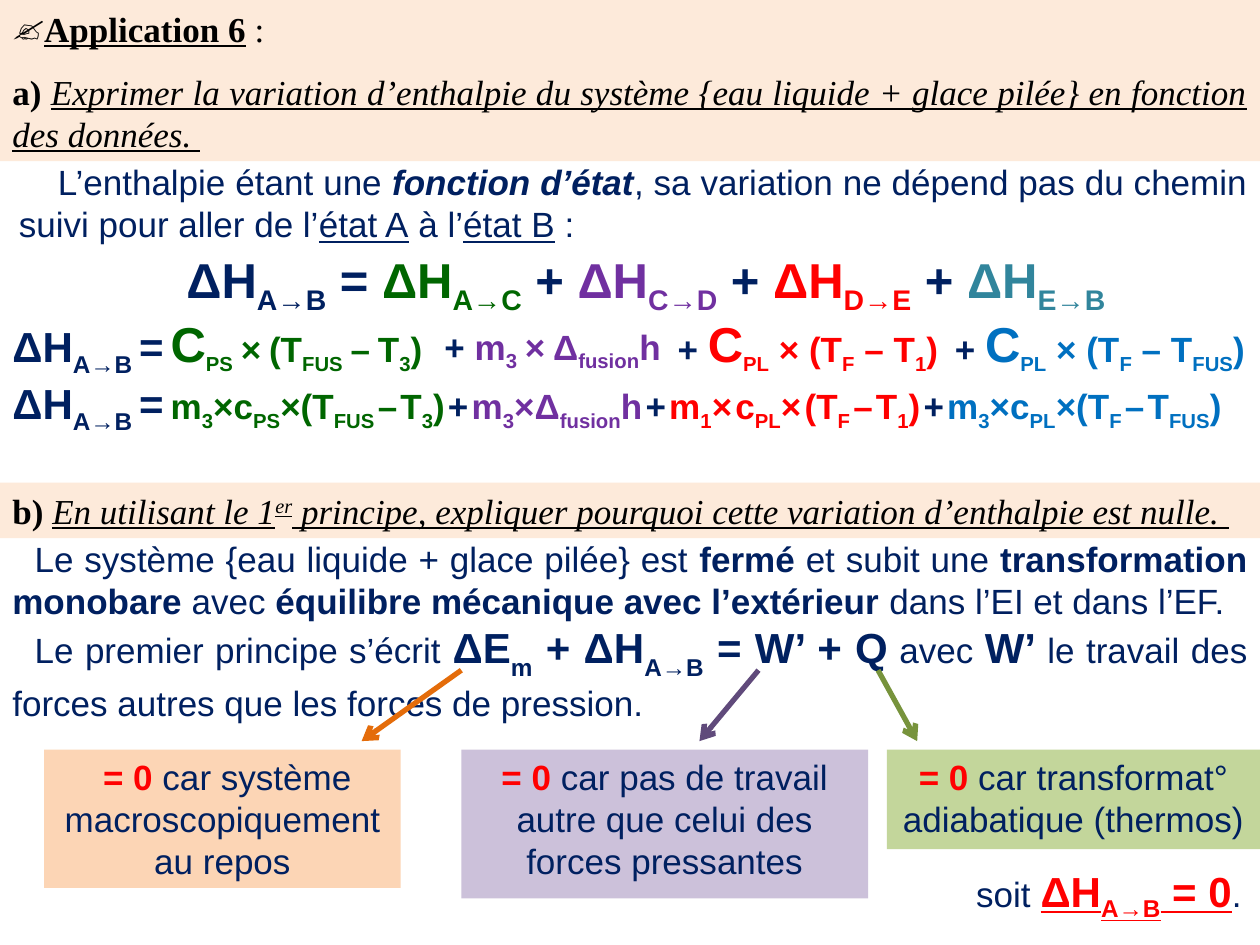
from pptx import Presentation
from pptx.dml.color import RGBColor
from pptx.enum.shapes import MSO_CONNECTOR as Link, MSO_SHAPE as Shape
from pptx.enum.text import MSO_ANCHOR as Anchor, MSO_AUTO_SIZE as Fit, PP_ALIGN as Align
from pptx.oxml.ns import qn
from pptx.util import Cm, Pt
from lxml.etree import SubElement

BLACK = RGBColor(0x00, 0x00, 0x00)
NAVY = RGBColor(0x00, 0x20, 0x60)
GREEN = RGBColor(0x00, 0x66, 0x00)
PURPLE = RGBColor(0x70, 0x30, 0xA0)
RED = RGBColor(0xFF, 0x00, 0x00)
TEAL = RGBColor(0x31, 0x85, 0x9C)
BLUE = RGBColor(0x00, 0x70, 0xC0)
CREAM = RGBColor(0xFD, 0xEA, 0xDA)
LILAC = RGBColor(0xCC, 0xC1, 0xDA)
LIME = RGBColor(0xC3, 0xD6, 0x9B)
PEACH = RGBColor(0xFC, 0xD5, 0xB5)
ORANGE = RGBColor(0xE4, 0x6C, 0x0A)
PLUM = RGBColor(0x60, 0x4A, 0x7B)
OLIVE = RGBColor(0x77, 0x93, 0x3C)
SERIF = "Times New Roman"

deck = Presentation()
deck.slide_width, deck.slide_height = Cm(25.4), Cm(19.05)
slide = deck.slides.add_slide(deck.slide_layouts[6])


def add_box(x, y, w, h, fill=None, anchor=Anchor.TOP, fit=Fit.NONE, wrap=True):
    area = Cm(x), Cm(y), Cm(w), Cm(h)
    if fill is None:
        box = slide.shapes.add_textbox(*area)
    else:
        box = slide.shapes.add_shape(Shape.RECTANGLE, *area)
        box.shadow.inherit = False
        box.fill.solid()
        box.fill.fore_color.rgb = fill
        box.line.fill.background()
    frame = box.text_frame
    looks = {"word_wrap": wrap, "auto_size": fit, "vertical_anchor": anchor}
    for key, val in looks.items():
        setattr(frame, key, val)
    return frame


def write(par, runs, face="Arial", align=Align.LEFT, after=0, shift=-25, gap=("Arial", 16)):
    par.alignment = align
    par.space_after = Pt(after)
    for text, size, color, style in runs:
        for i, part in enumerate(text.split("~")):
            bits = [(bit, face, size, j % 2) for j, bit in enumerate(part.split("_"))]
            if i:
                bits.insert(0, (" ", *gap, 0))
            for bit, name, pts, moved in bits:
                if not bit:
                    continue
                run = par.add_run()
                run.text = bit
                looks = {"name": name, "size": Pt(pts), "bold": "b" in style,
                         "italic": "i" in style, "underline": "u" in style}
                for key, val in looks.items():
                    setattr(run.font, key, val)
                run.font.color.rgb = color
                if moved:
                    run._r.get_or_add_rPr().set("baseline", str(shift * 1000))


title = add_box(0, 0, 25.4, 3.25, CREAM, Anchor.MIDDLE, Fit.SHAPE_TO_FIT_TEXT)
head = title.paragraphs[0]
props = head._p.get_or_add_pPr()
props.set("marL", "0")
props.set("indent", "0")
SubElement(props, qn("a:buFont")).set("typeface", SERIF)
SubElement(props, qn("a:buChar")).set("char", "✍")
write(head, [("Application 6", 20, BLACK, "bu"), (" ", 20, BLACK, "b"),
             (":", 20, BLACK, "")], SERIF, Align.JUSTIFY)
task = title.add_paragraph()
task.space_before = Pt(12)
write(task, [
    ("a) ", 20, BLACK, "b"),
    ("Exprimer la variation d’enthalpie du système {eau liquide + glace pilée} "
     "en fonction des données. ", 20, BLACK, "iu")], SERIF, Align.JUSTIFY)

total = add_box(3.51, 4.9, 25.4, 0.97).paragraphs[0]
steps = [(" = ", "A→C", GREEN), (" + ", "C→D", PURPLE), (" + ", "D→E", RED), (" + ", "E→B", TEAL)]
runs = [("ΔH_A→B_", 28, NAVY, "b")]
for sign, step, color in steps:
    runs += [(sign, 28, NAVY, "b"), (f"ΔH_{step}_", 28, color, "b")]
write(total, runs, after=10)

intro = add_box(0.13, 3.12, 25.27, 0.97).paragraphs[0]
intro._p.get_or_add_pPr().set("indent", str(Cm(0.79)))
write(intro, [
    ("L’enthalpie étant une ", 20, NAVY, ""), ("fonction d’état", 20, NAVY, "bi"),
    (", sa variation ne dépend pas du chemin suivi pour aller de l’", 20, NAVY, ""),
    ("état A", 20, NAVY, "u"), (" à l’", 20, NAVY, ""), ("état B", 20, NAVY, "u"),
    (" :", 20, NAVY, "")], align=Align.JUSTIFY, after=10)

left = [("ΔH_A→B_", 24, NAVY, "b"), (" ", 14, NAVY, "b"),
        ("=", 24, NAVY, "b"), (" ", 14, NAVY, "b")]
plus = [("+ ", 20, NAVY, "b")]
terms = [
    (0, 6.2, 10.31, left, "C", "_PS_~×~(T_FUS_~–~T_3_)", GREEN),
    (8.71, 6.43, 5.41, plus, "", "m_3_~×~Δ_fusion_h", PURPLE),
    (13.41, 6.2, 5.99, plus, "C", "_PL_ × (T_F_ – T_1_)", RED),
    (19, 6.2, 6.6, plus, "C", "_PL_ × (T_F_ – T_FUS_)", BLUE),
]
for x, y, w, start, big, rest, color in terms:
    par = add_box(x, y, w, 1.19).paragraphs[0]
    write(par, start + [(big, 28, color, "b"), (rest, 20, color, "b")], after=10)

final = add_box(0, 7.49, 26.49, 1.19).paragraphs[0]
sums = [("m_3_×c_PS_×(T_FUS_~–~T_3_)", GREEN), ("m_3_×Δ_fusion_h", PURPLE),
        ("m_1_×~c_PL_×~(T_F_~–~T_1_)", RED), ("m_3_×c_PL_×(T_F_~–~T_FUS_)", BLUE)]
runs = list(left)
for i, (text, color) in enumerate(sums):
    if i:
        runs.append(("~+~", 20, NAVY, "b"))
    runs.append((text, 20, color, "b"))
write(final, runs, after=10, gap=("Calibri", 8))

part = add_box(0, 9.73, 25.4, 1.12, CREAM, Anchor.MIDDLE, Fit.SHAPE_TO_FIT_TEXT)
write(part.paragraphs[0], [
    ("b) ", 20, BLACK, "b"),
    ("En utilisant le 1_er_ principe, expliquer pourquoi cette variation "
     "d’enthalpie est nulle. ", 20, BLACK, "iu")], SERIF, Align.JUSTIFY, shift=30)

proof = add_box(0, 10.72, 25.4, 1.45)
lines = [
    [("Le système {eau liquide + glace pilée} est ", 20, NAVY, ""), ("fermé", 20, NAVY, "b"),
     (" et subit une ", 20, NAVY, ""), ("transformation monobare ", 20, NAVY, "b"),
     ("avec ", 20, NAVY, ""), ("équilibre mécanique avec l’extérieur", 20, NAVY, "b"),
     (" dans l’EI et dans l’EF.", 20, NAVY, "")],
    [("Le premier principe s’écrit ", 20, NAVY, ""),
     ("ΔE_m_ + ΔH_A→B_ = W’ + Q", 24, NAVY, "b"), (" avec ", 20, NAVY, ""),
     ("W’", 24, NAVY, "b"),
     (" le travail des forces autres que les forces de pression.", 20, NAVY, "")],
]
for i, runs in enumerate(lines):
    par = proof.add_paragraph() if i else proof.paragraphs[0]
    par._p.get_or_add_pPr().set("indent", str(Cm(0.45)))
    write(par, runs, align=Align.JUSTIFY, shift=-30)

notes = [
    (9.3, 8.2, 3, LILAC, "= 0", " car pas de travail autre que celui des forces pressantes"),
    (17.88, 7.52, 2.01, LIME, "= 0", " car transformat° adiabatique (thermos)"),
    (0.89, 7.19, 2.79, PEACH, " = 0", " car système macroscopiquement au repos"),
]
for x, w, h, fill, zero, why in notes:
    par = add_box(x, 15.11, w, h, fill).paragraphs[0]
    write(par, [(zero, 20, RED, "b"), (why, 20, NAVY, "")], align=Align.CENTER, after=10)

end = add_box(19.43, 17.32, 5.97, 1.27, fit=Fit.SHAPE_TO_FIT_TEXT, wrap=False)
write(end.paragraphs[0], [("soit ", 20, NAVY, ""), ("ΔH_A→B_ = 0", 24, RED, "bu"),
                          (".", 20, NAVY, "")])

for x, to, color in [(9.3, 7.29, ORANGE), (15.29, 14.1, PLUM), (17.7, 18.49, OLIVE)]:
    arrow = slide.shapes.add_connector(Link.STRAIGHT, Cm(x), Cm(13.51), Cm(to), Cm(14.94))
    arrow.line.color.rgb = color
    arrow.line.width = Pt(3)
    SubElement(arrow.line._get_or_add_ln(), qn("a:tailEnd")).set("type", "arrow")
    SubElement(arrow._element.spPr, qn("a:effectLst"))

deck.save("out.pptx")
